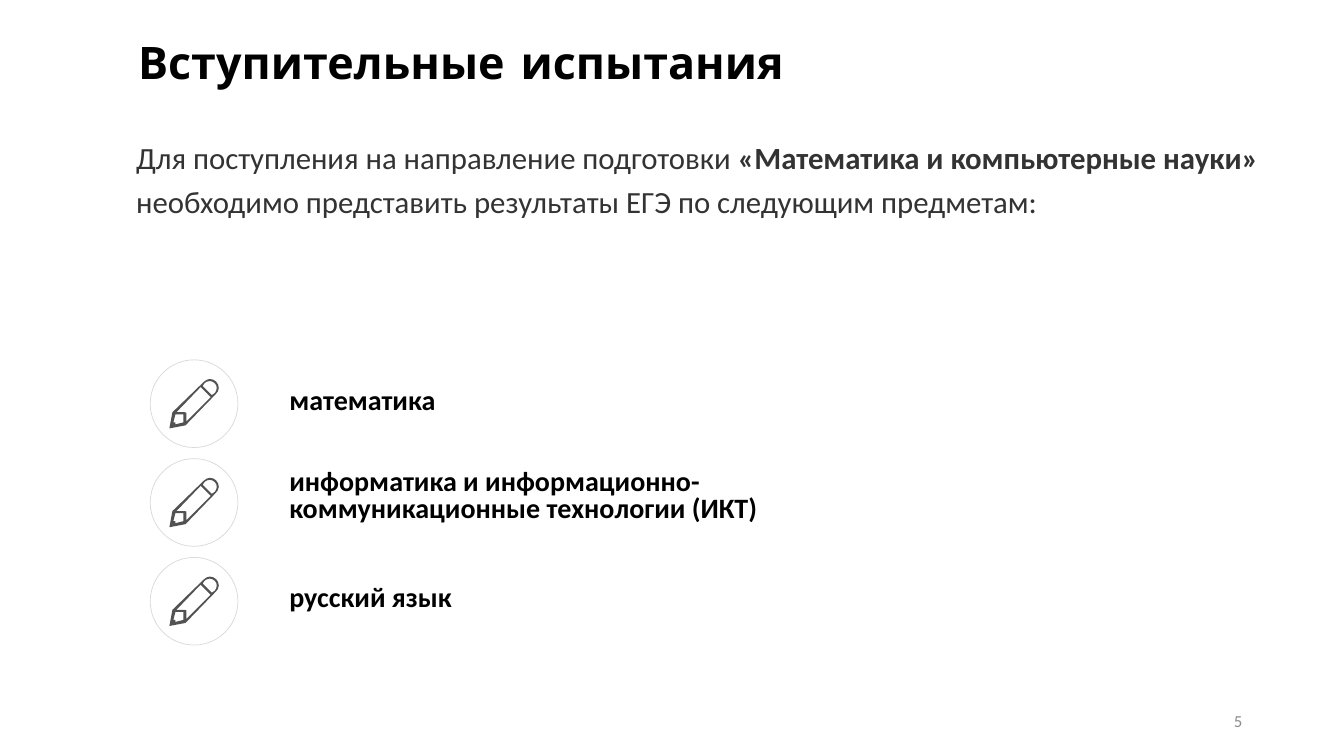
from pptx import Presentation
from pptx import util as u
from pptx.dml.color import RGBColor
from pptx.enum import text

INK = {"black": "000000", "body": "333333", "page": "8C8C8C",
       "ring": "D9D9D9", "pencil": "525252"}

# Pencil outline and its three openings, in hundredths of an inch
PENCIL = [
    [(40, 0), (37, 0.8), (34, 3), (3, 33), (0, 49), (16, 46), (46, 15),
     (48, 12.5), (49, 9), (48.3, 5.5), (46.4, 2.6), (43.5, 0.7)],
    [(45, 14), (42, 16), (33, 7), (35, 4), (37.3, 2.6), (40, 2),
     (42.7, 2.6), (45, 4.2), (46.5, 6.3), (47, 9), (46.4, 11.7)],
    [(17, 42), (17, 34), (16.5, 33.3), (15, 33), (7, 33), (31, 8), (41, 18)],
    [(14, 43), (6, 45), (6, 43), (4, 43), (6, 35), (14, 35)],
]

# Subject, text width, text height, line spacing, lift above the ring centre
ITEMS = [
    ("математика", 7.81, 0.34, 0.7, 0),
    ("информатика и информационно-\nкоммуникационные технологии (ИКТ)",
     9.67, 0.64, 0.8, 0.05),
    ("русский язык", 9.34, 0.34, 0.7, 0),
]


def tint(name):
    return RGBColor.from_string(INK[name])


def style(font, size, color, name="Calibri", bold=False):
    look = {"size": u.Pt(size), "name": name, "bold": bold}
    for key, value in look.items():
        setattr(font, key, value)
    font.color.rgb = tint(color)


def label(slide, box, **form):
    """Add a wrapping text box and return its frame."""
    frame = slide.shapes.add_textbox(*map(u.Inches, box)).text_frame
    frame.word_wrap = True
    for key, value in form.items():
        setattr(frame, key, value)
    return frame


def flush(slide, box):
    return label(slide, box, margin_left=0, margin_right=0,
                 auto_size=text.MSO_AUTO_SIZE.SHAPE_TO_FIT_TEXT)


def title(slide, box):
    head = slide.shapes.title
    sides = ("left", "top", "width", "height")
    for side, value in zip(sides, box):
        setattr(head, side, u.Inches(value))
    head.text_frame.vertical_anchor = text.MSO_ANCHOR.MIDDLE
    para = head.text_frame.paragraphs[0]
    para.text = "Вступительные испытания"
    para.alignment = text.PP_ALIGN.LEFT
    para.line_spacing = 0.9
    style(para.runs[0].font, 32, "black", "Comic Neue", True)


def intro(slide, box):
    para = flush(slide, box).paragraphs[0]
    para.line_spacing = 1.2
    parts = [
        ("Для поступления на направление подготовки ", False),
        ("«Математика и компьютерные науки» ", True),
        ("необходимо представить результаты ЕГЭ по следующим предметам:",
         False),
    ]
    for words, bold in parts:
        run = para.add_run()
        run.text = words
        style(run.font, 22, "body", bold=bold)


def badge(slide, left, top, size):
    """Draw a ring with a pencil in its middle."""
    group = slide.shapes.add_group_shape()
    ring = group.shapes.add_shape(
        9, *map(u.Inches, (left, top, size, size)))
    ring.fill.background()
    ring.line.color.rgb = tint("ring")
    ring.line.width = u.Pt(0.5)
    loops = [[(x * 10, y * 10) for x, y in loop] for loop in PENCIL]
    pen = group.shapes.build_freeform(*loops[0][0], scale=u.Inches(1) / 1000)
    for loop in loops:
        pen.move_to(*loop[0])
        pen.add_line_segments(loop[1:], close=True)
    inset = (size - 0.49) / 2
    icon = pen.convert_to_shape(u.Inches(left + inset), u.Inches(top + inset))
    icon.fill.solid()
    icon.fill.fore_color.rgb = tint("pencil")
    icon.line.fill.background()
    for shape in (ring, icon):
        shape.shadow.inherit = False


def subjects(slide, left, top, size=0.87, pitch=0.98):
    for row, (words, width, height, space, lift) in enumerate(ITEMS):
        y = top + row * pitch
        badge(slide, left, y, size)
        box = (left + 1.38, y + (size - height) / 2 - lift, width, height)
        para = flush(slide, box).paragraphs[0]
        para.text = words
        para.line_spacing = space
        for run in para.runs:
            style(run.font, 20, "black", bold=True)


def number(slide, box):
    frame = label(slide, box, vertical_anchor=text.MSO_ANCHOR.MIDDLE)
    para = frame.paragraphs[0]
    para.text = "5"
    para.alignment = text.PP_ALIGN.RIGHT
    style(para.runs[0].font, 12, "page")


def main():
    deck = Presentation()
    deck.slide_width, deck.slide_height = u.Inches(13.33), u.Inches(7.5)
    slide = deck.slides.add_slide(deck.slide_layouts[5])
    title(slide, (1.27, 0.13, 8.71, 1.02))
    intro(slide, (1.35, 1.25, 11.55, 0.95))
    subjects(slide, 1.49, 3.57)
    number(slide, (9.42, 6.95, 3, 0.4))
    deck.save("out.pptx")


if __name__ == "__main__":
    main()
